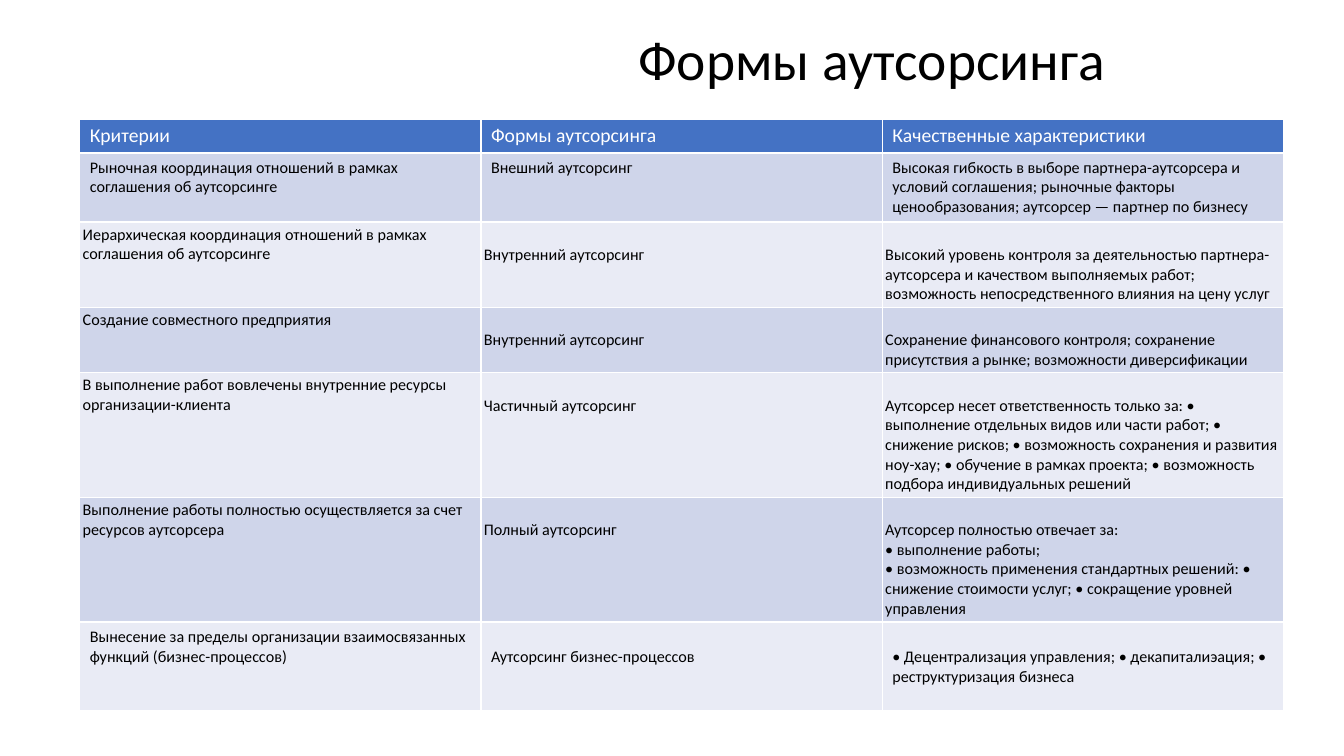
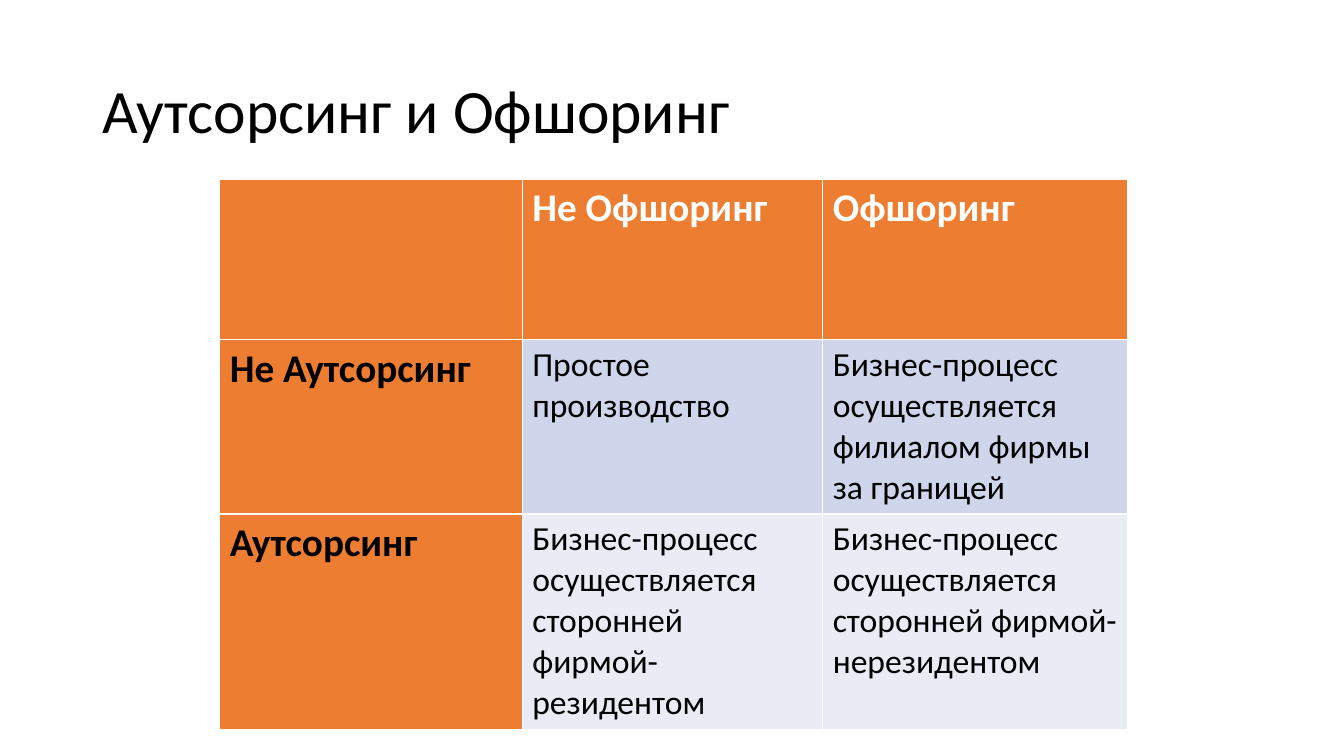
from pptx import Presentation
from pptx.dml.color import RGBColor
from pptx.enum.text import MSO_ANCHOR, MSO_AUTO_SIZE, PP_ALIGN
from pptx.util import Inches, Pt

COLORS = {
    "blue": "4472C4",
    "orange": "ED7D31",
    "dark": "CFD5EA",
    "light": "E9EBF5",
    "white": "FFFFFF",
    "black": "000000",
}
FONT = "Calibri"
TIGHT = 0.03  # cell margin of the inner rows
DROP = 0.2  # height of one small text line

FORMS = [
    ["Критерии", "Формы аутсорсинга", "Качественные характеристики"],
    ["Рыночная координация отношений в рамках соглашения об аутсорсинге",
     "Внешний аутсорсинг",
     "Высокая гибкость в выборе партнера-аутсорсера и условий соглашения; "
     "рыночные факторы ценообразования; аутсорсер — партнер по бизнесу"],
    ["Иерархическая координация отношений в рамках соглашения об аутсорсинге",
     "Внутренний аутсорсинг",
     "Высокий уровень контроля за деятельностью партнера-аутсорсера и "
     "качеством выполняемых работ; возможность непосредственного влияния "
     "на цену услуг"],
    ["Создание совместного предприятия",
     "Внутренний аутсорсинг",
     "Сохранение финансового контроля; сохранение присутствия а рынке; "
     "возможности диверсификации"],
    ["В выполнение работ вовлечены внутренние ресурсы организации-клиента",
     "Частичный аутсорсинг",
     "Аутсорсер несет ответственность только за: • выполнение отдельных "
     "видов или части работ; • снижение рисков; • возможность сохранения и "
     "развития ноу-хау; • обучение в рамках проекта; • возможность подбора "
     "индивидуальных решений"],
    ["Выполнение работы полностью осуществляется за счет ресурсов аутсорсера",
     "Полный аутсорсинг",
     "Аутсорсер полностью отвечает за:\n• выполнение работы;\n"
     "• возможность применения стандартных решений: • снижение стоимости "
     "услуг; • сокращение уровней управления"],
    ["Вынесение за пределы организации взаимосвязанных функций "
     "(бизнес-процессов)",
     "Аутсорсинг бизнес-процессов",
     "• Децентрализация управления; • декапиталиэация; • реструктуризация "
     "бизнеса"],
]
MATRIX = [
    ["", "Не Офшоринг", "Офшоринг"],
    ["Не Аутсорсинг", "Простое производство",
     "Бизнес-процесс осуществляется филиалом фирмы за границей"],
    ["Аутсорсинг",
     "Бизнес-процесс осуществляется сторонней фирмой-резидентом",
     "Бизнес-процесс осуществляется сторонней фирмой-нерезидентом"],
]


def paint(runs, size, color, bold=False):
    for run in runs:
        run.font.name = FONT
        run.font.size = Pt(size)
        run.font.bold = bold
        run.font.color.rgb = RGBColor.from_string(COLORS[color])


def add_slide(prs, text, box, size, align):
    """Add a slide with its title in the given box."""
    slide = prs.slides.add_slide(prs.slide_layouts[5])
    title = slide.shapes.title
    title.left, title.top, title.width, title.height = map(Inches, box)
    frame = title.text_frame
    frame.text = text
    frame.auto_size = MSO_AUTO_SIZE.NONE
    frame.vertical_anchor = MSO_ANCHOR.MIDDLE
    para = frame.paragraphs[0]
    para.alignment = align
    para.line_spacing = 0.9
    paint(para.runs, size, "black")
    return slide


def fill_cell(cell, text, fill, size, color, bold=False):
    cell.fill.solid()
    cell.fill.fore_color.rgb = RGBColor.from_string(COLORS[fill])
    cell.text = text
    for para in cell.text_frame.paragraphs:
        paint(para.runs, size, color, bold)


def add_grid(slide, left, top, cols, rows):
    shape = slide.shapes.add_table(
        len(rows), len(cols), Inches(left), Inches(top),
        Inches(sum(cols)), Inches(sum(rows)))
    table = shape.table
    for col, width in zip(table.columns, cols):
        col.width = Inches(width)
    for row, height in zip(table.rows, rows):
        row.height = Inches(height)
    return table


def band(row):
    return "dark" if row % 2 else "light"


def forms_table(slide, left, top):
    rows = [0.33, 0.68, 0.84, 0.65, 1.23, 1.24, 0.88]
    table = add_grid(slide, left, top, [3.98] * 3, rows)
    last = len(rows) - 1
    for r, line in enumerate(FORMS):
        for c, text in enumerate(line):
            cell = table.cell(r, c)
            if r == 0:
                fill_cell(cell, text, "blue", 14, "white")
                continue
            fill_cell(cell, text, band(r), 11.5, "black")
            edge = 0.05
            if 1 < r < last:
                edge = TIGHT
                cell.margin_left = cell.margin_right = Inches(edge)
                cell.margin_bottom = Inches(edge)
            drop = DROP if r > 1 and c else 0
            cell.margin_top = Inches(edge + drop)


def matrix_table(slide, left, top):
    table = add_grid(slide, left, top, [3, 2.98, 3.02], [1.59, 1.73, 2.13])
    for r, line in enumerate(MATRIX):
        for c, text in enumerate(line):
            cell = table.cell(r, c)
            if r and c:
                fill_cell(cell, text, band(r), 24, "black")
            else:
                color = "black" if r else "white"
                fill_cell(cell, text, "orange", 28, color, True)


def main():
    prs = Presentation()
    prs.slide_width, prs.slide_height = Inches(13.33), Inches(7.5)
    forms = add_slide(prs, "Формы аутсорсинга", (2.06, 0.38, 9, 0.48),
                      39.6, PP_ALIGN.RIGHT)
    forms_table(forms, 0.79, 1.18)
    matrix = add_slide(prs, "Аутсорсинг и Офшоринг", (0.92, 0.4, 11.5, 1.45),
                       44, PP_ALIGN.LEFT)
    matrix_table(matrix, 2.18, 1.78)
    prs.save("out.pptx")


if __name__ == "__main__":
    main()
